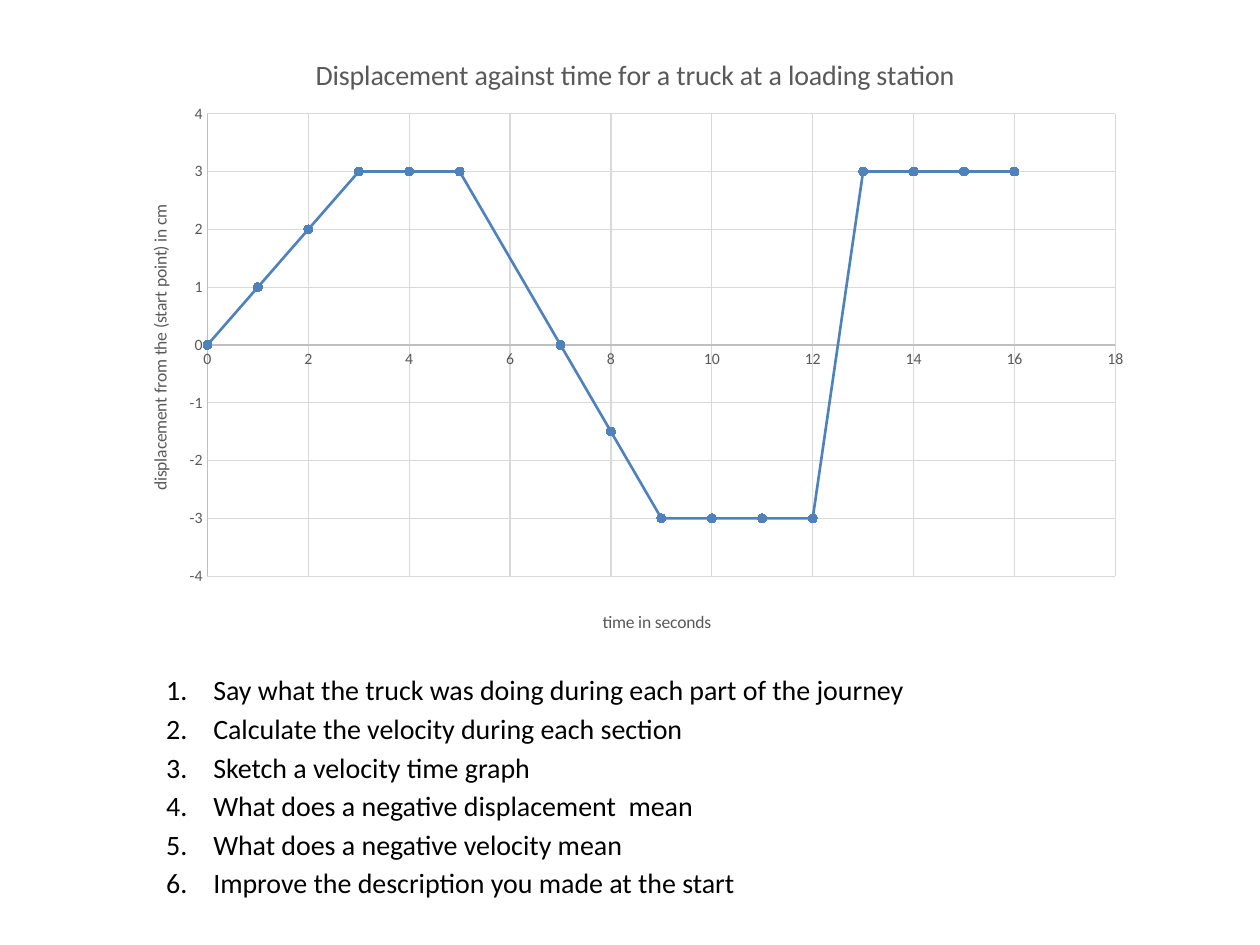
from dataclasses import dataclass

from lxml import etree
from pptx import Presentation
from pptx.chart.data import XyChartData
from pptx.dml.color import RGBColor
from pptx.enum.chart import XL_CHART_TYPE, XL_MARKER_STYLE, XL_TICK_MARK
from pptx.enum.text import MSO_AUTO_SIZE
from pptx.oxml import parse_xml
from pptx.oxml.ns import nsdecls, qn
from pptx.util import Cm, Pt

SCATTER = XL_CHART_TYPE.XY_SCATTER_LINES
CIRCLE = XL_MARKER_STYLE.CIRCLE
NO_TICK = XL_TICK_MARK.NONE
FIT_SHAPE = MSO_AUTO_SIZE.SHAPE_TO_FIT_TEXT

FONT = "Calibri"
COLORS = {
    "text": "000000",
    "label": "595959",
    "axis": "BFBFBF",
    "grid": "D9D9D9",
    "series": "4F81BD",
}
POINTS = [
    (0, 0), (1, 1), (2, 2), (3, 3), (4, 3), (5, 3), (7, 0), (8, -1.5),
    (9, -3), (10, -3), (11, -3), (12, -3), (13, 3), (14, 3), (15, 3), (16, 3),
]
QUESTIONS = [
    "Say what the truck was doing during each part of the journey",
    "Calculate the velocity during each section",
    "Sketch a velocity time graph",
    "What does a negative displacement  mean",
    "What does a negative velocity mean",
    "Improve the description you made at the start",
]


@dataclass
class TitleSpec:
    text: str
    size: int
    x: float
    y: float
    rotation: int = 0


@dataclass
class AxisSpec:
    title: TitleSpec
    low: int
    high: int
    step: int


CHART_TITLE = TitleSpec(
    "Displacement against time for a truck at a loading station", 16, 0.19, 0.04)
TIME_AXIS = AxisSpec(TitleSpec("time in seconds", 10, 0.47, 0.93), 0, 18, 2)
DISPLACEMENT_AXIS = AxisSpec(
    TitleSpec("displacement from the (start point) in cm", 10, 0.03, 0.28, -90),
    -4, 4, 1)


def rgb(name: str) -> RGBColor:
    return RGBColor.from_string(COLORS[name])


def style_font(font, size: int, color: str) -> None:
    font.name = FONT
    font.size = Pt(size)
    font.bold = False
    font.color.rgb = rgb(color)


def style_line(line, color: str, width: float) -> None:
    line.color.rgb = rgb(color)
    line.width = Pt(width)


def manual_layout(**values):
    """Return a c:layout element, its values being fractions of the chart."""
    layout = parse_xml(f"<c:layout {nsdecls('c')}><c:manualLayout/></c:layout>")
    for name, value in values.items():
        etree.SubElement(layout[0], qn(f"c:{name}")).set("val", str(value))
    return layout


def write_title(title, spec: TitleSpec) -> None:
    tf = title.text_frame
    tf.text = spec.text
    style_font(tf.paragraphs[0].font, spec.size, "label")
    tf._txBody.find(qn("a:bodyPr")).set("rot", str(spec.rotation * 60000))
    element = title._element
    for old in element.findall(qn("c:layout")):
        element.remove(old)
    element.find(qn("c:tx")).addnext(
        manual_layout(xMode="edge", yMode="edge", x=spec.x, y=spec.y))


def style_axis(axis, spec: AxisSpec) -> None:
    axis.minimum_scale, axis.maximum_scale = spec.low, spec.high
    axis.major_unit = spec.step
    axis.major_tick_mark = axis.minor_tick_mark = NO_TICK
    axis.has_major_gridlines = True
    style_line(axis.major_gridlines.format.line, "grid", 0.75)
    style_line(axis.format.line, "axis", 0.75)
    style_font(axis.tick_labels.font, 9, "label")
    write_title(axis.axis_title, spec.title)


def add_displacement_chart(s) -> None:
    data = XyChartData()
    series = data.add_series("Series 1")
    for x, y in POINTS:
        series.add_data_point(x, y)
    chart = s.shapes.add_chart(
        SCATTER, Cm(2.31), Cm(0.53), Cm(20.8), Cm(12.6), data).chart
    style_font(chart.font, 10, "text")
    chart.has_legend = False
    chart.has_title = True
    write_title(chart.chart_title, CHART_TITLE)
    style_axis(chart.category_axis, TIME_AXIS)
    style_axis(chart.value_axis, DISPLACEMENT_AXIS)

    plot = chart.plots[0]
    plot.vary_by_categories = False
    line = plot.series[0]
    line.smooth = False
    style_line(line.format.line, "series", 1.5)
    line.marker.style = CIRCLE
    line.marker.size = 5
    line.marker.format.fill.solid()
    line.marker.format.fill.fore_color.rgb = rgb("series")
    style_line(line.marker.format.line, "series", 0.75)

    area = chart._chartSpace.chart.plotArea
    for old in area.findall(qn("c:layout")):
        area.remove(old)
    area.insert(0, manual_layout(
        layoutTarget="inner", xMode="edge", yMode="edge",
        x=0.09, y=0.14, w=0.88, h=0.74))


def add_questions(s) -> None:
    tf = s.shapes.add_textbox(Cm(3.1), Cm(13.34), Cm(20), Cm(4.93)).text_frame
    tf.word_wrap = True
    tf.auto_size = FIT_SHAPE
    for i, question in enumerate(QUESTIONS):
        p = tf.paragraphs[0] if i == 0 else tf.add_paragraph()
        p.text = question
        p.line_spacing = 1.15
        style_font(p.font, 16, "text")
        pPr = p._p.get_or_add_pPr()
        pPr.set("marL", str(Cm(0.95)))
        pPr.set("indent", str(Cm(-0.95)))
        number = parse_xml(f'<a:buAutoNum {nsdecls("a")} type="arabicPeriod"/>')
        pPr.find(qn("a:defRPr")).addprevious(number)
    p.space_after = Pt(10)


def main() -> None:
    prs = Presentation()
    prs.slide_width, prs.slide_height = Cm(25.4), Cm(19.05)
    s = prs.slides.add_slide(prs.slide_layouts[6])
    add_displacement_chart(s)
    add_questions(s)
    prs.save("out.pptx")


if __name__ == "__main__":
    main()
